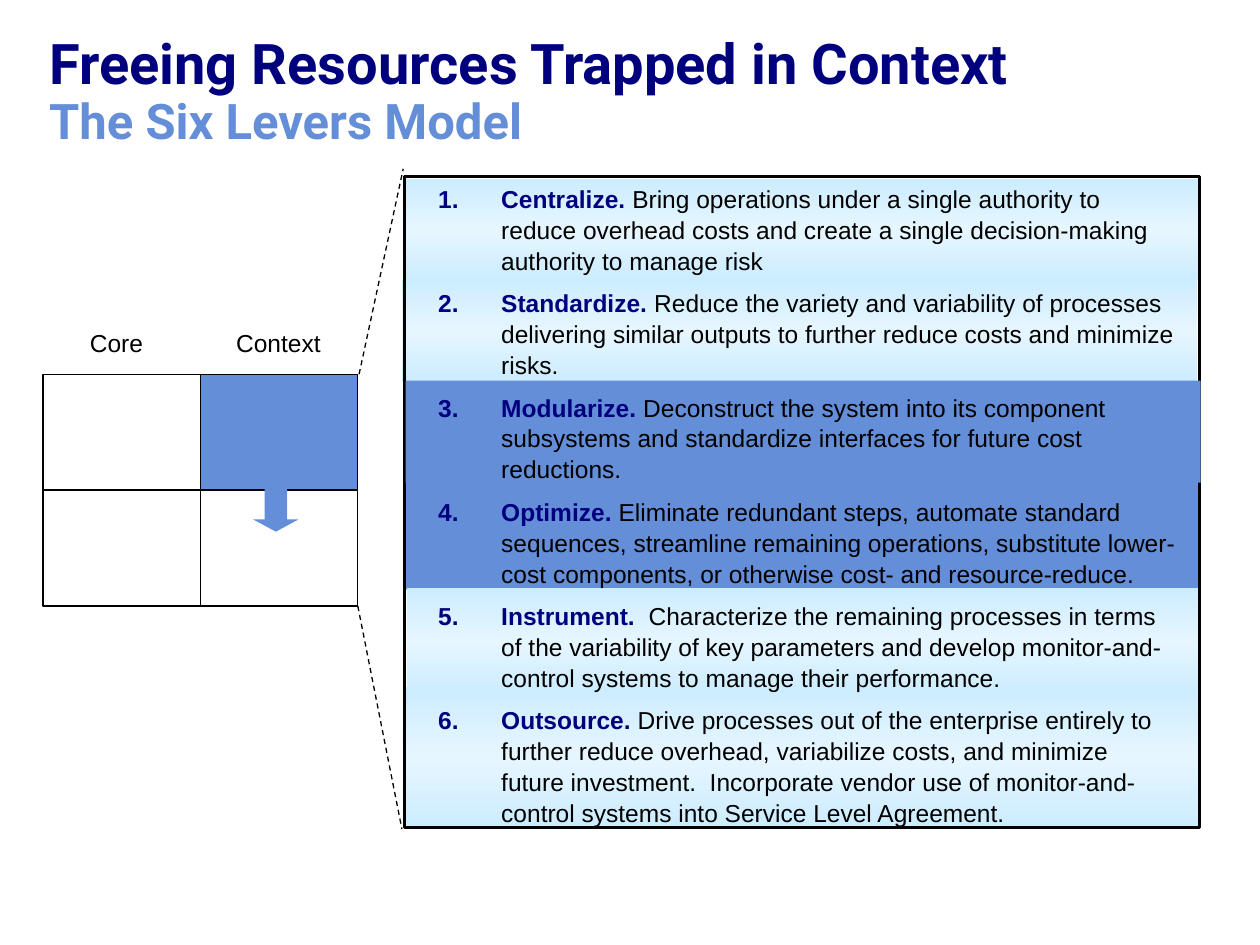
import copy
import pptx
import pptx.util
import pptx.dml.color
import pptx.enum.dml
import pptx.enum.shapes
import pptx.enum.text
import pptx.oxml.ns
import pptx.oxml.xmlchemy

NAVY, BLUE, BLACK, WHITE = "00007E", "648ED8", "000000", "FFFFFF"
PALE_GRADIENT = ["CCECFF", "E6F6FF", "CCECFF"]

TITLE = [("Freeing Resources Trapped in Context", 32, NAVY),
         ("The Six Levers Model", 28, BLUE)]
LEVERS = [
    ("Centralize. ", "Bring operations under a single authority to reduce overhead costs and "
     "create a single decision-making authority to manage risk"),
    ("Standardize. ", "Reduce the variety and variability of processes delivering similar "
     "outputs to further reduce costs and minimize risks."),
    ("Modularize.", " Deconstruct the system into its component subsystems and standardize "
     "interfaces for future cost reductions."),
    ("Optimize.", " Eliminate redundant steps, automate standard sequences, streamline remaining "
     "operations, substitute lower-cost components, or otherwise cost- and resource-reduce."),
    ("Instrument.", "  Characterize the remaining processes in terms of the variability of key "
     "parameters and develop monitor-and-control systems to manage their performance."),
    ("Outsource.", " Drive processes out of the enterprise entirely to further reduce overhead, "
     "variabilize costs, and minimize future investment.  Incorporate vendor use of "
     "monitor-and-control systems into Service Level Agreement."),
]
# Lever bands: left, top, width, height, fill. The front ones overlap the frame.
BACK_BANDS = [(3.19, 2.22, 6.31, 0.81, PALE_GRADIENT),
              (3.2, 3.8, 6.31, 0.88, BLUE),
              (3.2, 5.45, 6.31, 1.12, PALE_GRADIENT),
              (3.21, 1.42, 6.31, 0.8, PALE_GRADIENT)]
FRONT_BANDS = [(3.22, 3.02, 6.31, 0.81, BLUE),
               (3.23, 4.67, 6.28, 0.83, PALE_GRADIENT)]
FRAME = (3.21, 1.4, 6.31, 5.17)

MATRIX_LEFT, MATRIX_TOP, CELL_WIDTH, CELL_HEIGHT = 0.34, 2.97, 1.25, 0.92
MATRIX_FILLS = [[None, BLUE], [None, WHITE]]
COLUMN_LABELS = [("Core", 0.51, 0.83), ("Context", 1.67, 1.08)]
ZOOM_LINES = [(2.85, 2.97, 3.2, 1.34), (2.84, 4.81, 3.19, 6.58)]

SHAPES = pptx.enum.shapes.MSO_SHAPE


def rgb(color):
    return pptx.dml.color.RGBColor.from_string(color)


def inches(*lengths):
    return [pptx.util.Inches(length) for length in lengths]


def new_element(tag):
    return pptx.oxml.xmlchemy.OxmlElement(tag)


def style_run(run, size, color, bold=False, font="Arial"):
    run.font.name, run.font.size, run.font.bold = font, pptx.util.Pt(size), bold
    run.font.color.rgb = rgb(color)


def fill_gradient(shape, colors):
    """Spread three colours evenly from top to bottom."""
    shape.fill.gradient()
    shape.fill.gradient_angle = 90
    stop_list = shape._element.spPr.find(".//" + pptx.oxml.ns.qn("a:gsLst"))
    stop_list.append(copy.deepcopy(stop_list[-1]))
    for index, (stop, color) in enumerate(zip(shape.fill.gradient_stops, colors)):
        stop.position = index / (len(colors) - 1)
        stop.color.rgb = rgb(color)


def add_block(slide, box, fill=None, line_width=None, preset=SHAPES.RECTANGLE):
    block = slide.shapes.add_shape(preset, *inches(*box))
    block.shadow.inherit = False
    if fill is None:
        block.fill.background()
    elif isinstance(fill, list):
        fill_gradient(block, fill)
    else:
        block.fill.solid()
        block.fill.fore_color.rgb = rgb(fill)
    if line_width:
        block.line.color.rgb = rgb(BLACK)
        block.line.width = pptx.util.Pt(line_width)
    else:
        block.line.fill.background()
    return block


def add_bands(slide, bands):
    for *box, fill in bands:
        add_block(slide, box, fill)


def add_title(slide):
    title = slide.shapes.title
    title.left, title.top, title.width, title.height = inches(0.29, 0.24, 9.36, 1.08)
    frame = title.text_frame
    frame.text = "\v".join(text for text, _, _ in TITLE)
    frame.vertical_anchor = pptx.enum.text.MSO_ANCHOR.TOP
    frame.auto_size = pptx.enum.text.MSO_AUTO_SIZE.NONE
    heading = frame.paragraphs[0]
    heading.alignment = pptx.enum.text.PP_ALIGN.LEFT
    heading.line_spacing = 0.9
    for run, (_, size, color) in zip(heading.runs, TITLE):
        style_run(run, size, color, True, "Roboto")


def add_matrix(slide):
    for row, fills in enumerate(MATRIX_FILLS):
        for column, fill in enumerate(fills):
            box = (MATRIX_LEFT + column * CELL_WIDTH, MATRIX_TOP + row * CELL_HEIGHT,
                   CELL_WIDTH, CELL_HEIGHT)
            add_block(slide, box, fill, 0.75)
    for text, left, width in COLUMN_LABELS:
        label = slide.shapes.add_textbox(*inches(left, 2.52, width, 0.4)).text_frame
        label.text = text
        label.word_wrap = True
        label.vertical_anchor = pptx.enum.text.MSO_ANCHOR.MIDDLE
        label.paragraphs[0].alignment = pptx.enum.text.PP_ALIGN.CENTER
        style_run(label.paragraphs[0].runs[0], 14, BLACK)
    arrow = add_block(slide, (2.01, 3.82, 0.36, 0.4), BLUE, preset=SHAPES.DOWN_ARROW)
    arrow.adjustments[0], arrow.adjustments[1] = 0.5, 0.27


def add_zoom_lines(slide):
    for ends in ZOOM_LINES:
        zoom = slide.shapes.add_connector(pptx.enum.shapes.MSO_CONNECTOR.STRAIGHT, *inches(*ends))
        zoom.line.color.rgb = rgb(BLACK)
        zoom.line.width = pptx.util.Pt(0.75)
        zoom.line.dash_style = pptx.enum.dml.MSO_LINE.DASH
        zoom._element.spPr.append(new_element("a:effectLst"))


def number_paragraph(paragraph):
    """Give the paragraph a navy automatic number with a hanging indent."""
    properties = paragraph._p.get_or_add_pPr()
    properties.set("marL", str(pptx.util.Inches(0.5)))
    properties.set("indent", str(-pptx.util.Inches(0.5)))
    number_color = new_element("a:buClr")
    color = new_element("a:srgbClr")
    color.set("val", NAVY)
    number_color.append(color)
    numbering = new_element("a:buAutoNum")
    numbering.set("type", "arabicPeriod")
    properties.extend([number_color, numbering])


def add_levers(slide):
    frame = slide.shapes.add_textbox(*inches(3.38, 1.4, 6.06, 5.1)).text_frame
    frame.word_wrap = True
    for index, (name, description) in enumerate(LEVERS):
        lever = frame.add_paragraph() if index else frame.paragraphs[0]
        number_paragraph(lever)
        lever.line_spacing = 1.05
        if index:
            lever.space_before = pptx.util.Pt(6.7)
        for text, color, bold in [(name, NAVY, True), (description, BLACK, False)]:
            run = lever.add_run()
            run.text = text
            style_run(run, 14, color, bold)


def main():
    deck = pptx.Presentation()
    deck.slide_width, deck.slide_height = inches(10, 7.5)
    slide = deck.slides.add_slide(deck.slide_layouts[5])
    add_title(slide)
    add_bands(slide, BACK_BANDS)
    add_block(slide, FRAME, line_width=1.5)
    add_matrix(slide)
    add_zoom_lines(slide)
    add_bands(slide, FRONT_BANDS)
    add_levers(slide)
    deck.save("out.pptx")


if __name__ == "__main__":
    main()
